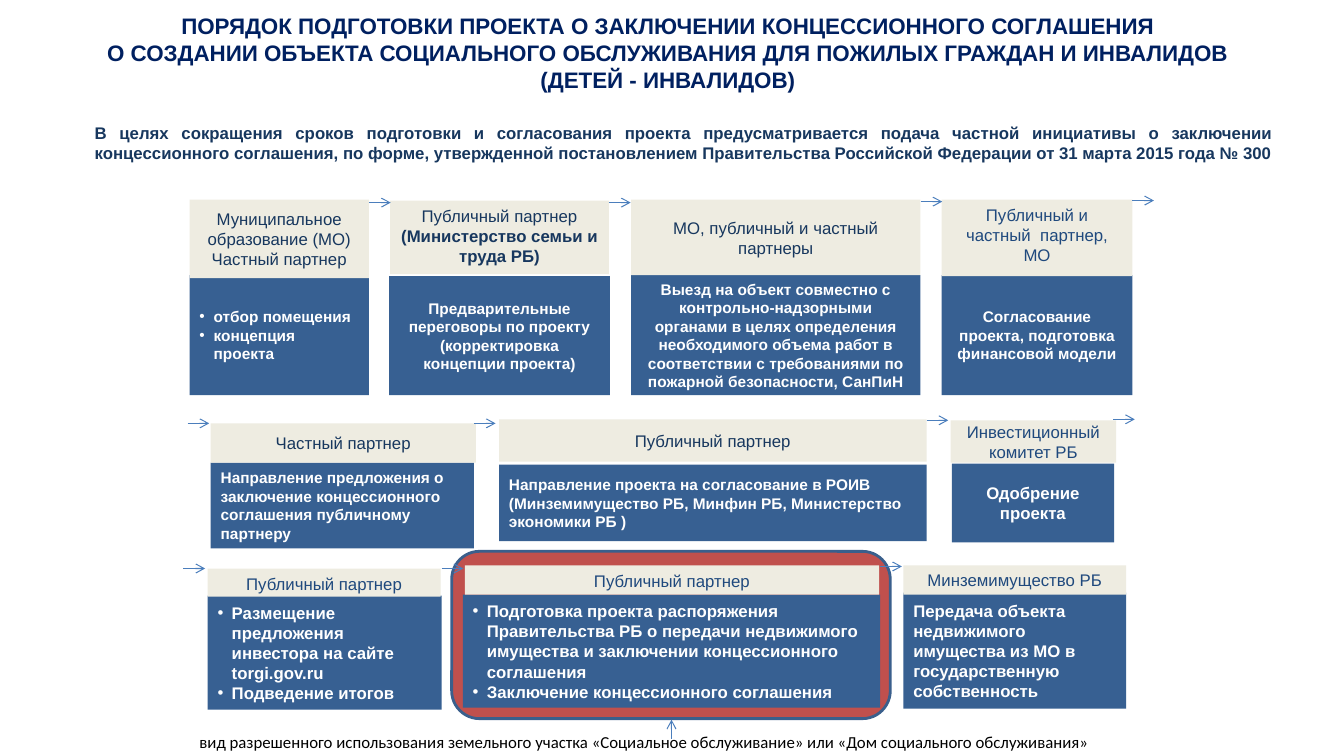
from lxml import etree
from pptx import Presentation
from pptx.dml.color import RGBColor
from pptx.enum.shapes import MSO_CONNECTOR, MSO_SHAPE
from pptx.enum.text import MSO_ANCHOR, PP_ALIGN
from pptx.oxml.ns import qn
from pptx.util import Inches, Pt

LEFT, CENTER, JUSTIFY = PP_ALIGN.LEFT, PP_ALIGN.CENTER, PP_ALIGN.JUSTIFY
TOP, MIDDLE = MSO_ANCHOR.TOP, MSO_ANCHOR.MIDDLE
RECT, ROUNDED = MSO_SHAPE.RECTANGLE, MSO_SHAPE.ROUNDED_RECTANGLE
STRAIGHT = MSO_CONNECTOR.STRAIGHT

CREAM, BLUE, WHITE = "EEECE1", "376092", "FFFFFF"
NAVY, STEEL, TITLE_BLUE = "17375E", "1F497D", "002060"
RED, FRAME_BLUE, ARROW_BLUE = "C0504D", "3A5F8C", "4B7EBC"
ARROW_LENGTH = 2.15


def color(value):
    return RGBColor.from_string(value)


class Board:
    """Draws styled elements on a page whose grid has 75 rows and square cells."""

    def __init__(self, deck):
        self.page = deck.slides.add_slide(deck.slide_layouts[6])
        self.cell = deck.slide_height / 75

    def place(self, *cells):
        return [round(count * self.cell) for count in cells]

    def fill_text(self, box, lines, ink, size=12, align=LEFT, anchor=TOP,
                  bold=False, bold_from=None, bullets=False, font="Arial"):
        frame = box.text_frame
        frame.word_wrap = True
        frame.vertical_anchor = anchor
        frame.text = "\n".join(lines)
        for index, para in enumerate(frame.paragraphs):
            para.alignment = align
            if bullets:
                self.bullet(para)
            for span in para.runs:
                span.font.name = font
                span.font.size = Pt(size)
                span.font.color.rgb = color(ink)
                span.font.bold = bold or (bold_from is not None and index >= bold_from)

    def bullet(self, para):
        properties = para._p.get_or_add_pPr()
        properties.set("marL", str(Inches(0.14)))
        properties.set("indent", str(-Inches(0.14)))
        etree.SubElement(properties, qn("a:buFont")).set("typeface", "Arial")
        etree.SubElement(properties, qn("a:buChar")).set("char", "•")

    def text(self, area, lines, ink, **style):
        box = self.page.shapes.add_textbox(*self.place(*area))
        self.fill_text(box, lines, ink, **style)

    def panel(self, area, fill, kind=RECT, outline=None):
        box = self.page.shapes.add_shape(kind, *self.place(*area))
        box.shadow.inherit = False
        box.fill.solid()
        box.fill.fore_color.rgb = color(fill)
        if outline:
            box.line.color.rgb = color(outline)
            box.line.width = Pt(2)
        else:
            box.line.fill.background()
        return box

    def step(self, header, body):
        area, lines, style = body
        self.fill_text(self.panel(area, BLUE), lines, WHITE,
                       **{"bold": True, "anchor": MIDDLE, **style})
        area, lines, style = header
        self.fill_text(self.panel(area, CREAM), lines,
                       **{"ink": NAVY, "align": CENTER, "anchor": MIDDLE, **style})

    def arrow(self, left, top, across=ARROW_LENGTH, down=0):
        ends = self.place(left, top, left + across, top + down)
        link = self.page.shapes.add_connector(STRAIGHT, *ends)
        link.line.color.rgb = color(ARROW_BLUE)
        link.line.width = Pt(0.75)
        outline = link._element.spPr.find(qn("a:ln"))
        etree.SubElement(outline, qn("a:tailEnd")).set("type", "arrow")
        etree.SubElement(link._element.spPr, qn("a:effectLst"))


STEPS = [
    (((18.8, 19.8, 17.8, 7.8), ["Муниципальное образование (МО)", "Частный партнер"], {}),
     ((18.8, 27.3, 17.8, 11.9), ["отбор помещения", "концепция проекта"],
      {"size": 11, "bullets": True})),
    (((38.7, 19.9, 21.7, 7.3), ["Публичный партнер", "(Министерство семьи и труда РБ)"],
      {"anchor": TOP, "bold_from": 1}),
     ((38.6, 27.4, 21.9, 11.8),
      ["Предварительные переговоры по проекту (корректировка концепции проекта)"],
      {"size": 11, "align": CENTER})),
    (((62.6, 19.8, 28.7, 7.5), ["МО, публичный и частный партнеры"], {}),
     ((62.6, 27.3, 28.7, 11.9),
      ["Выезд на объект совместно с контрольно-надзорными органами в целях определения "
       "необходимого объема работ в соответствии с требованиями по пожарной "
       "безопасности, СанПиН"],
      {"size": 11, "align": CENTER})),
    (((93.4, 19.8, 18.9, 7.6), ["Публичный и частный  партнер, МО"],
      {"ink": STEEL, "anchor": TOP}),
     ((93.4, 27.3, 18.9, 11.9), ["Согласование проекта, подготовка финансовой модели"],
      {"size": 11, "align": CENTER})),
    (((20.9, 42, 26.3, 3.9), ["Частный партнер"], {}),
     ((20.9, 45.9, 26.1, 8.5),
      ["Направление предложения о заключение концессионного соглашения публичному партнеру"],
      {"size": 11})),
    (((49.5, 41.6, 42.4, 4.2), ["Публичный партнер"], {}),
     ((49.5, 46.1, 42.4, 7.6),
      ["Направление проекта на согласование в РОИВ (Минземимущество РБ, Минфин РБ, "
       "Министерство экономики РБ )"],
      {"size": 11})),
    (((94.3, 41.7, 16.4, 4.2), ["Инвестиционный комитет РБ"], {"ink": STEEL}),
     ((94.4, 46, 16.1, 7.8), ["Одобрение проекта"], {"align": CENTER})),
    (((20.6, 56.4, 23.1, 2.8), ["Публичный партнер"], {"ink": STEEL, "anchor": TOP}),
     ((20.6, 59.1, 23.2, 11.3),
      ["Размещение предложения инвестора на сайте torgi.gov.ru", "Подведение итогов"],
      {"bullets": True})),
    (((46.1, 56.1, 41.1, 2.9), ["Публичный партнер"], {"ink": STEEL, "anchor": TOP}),
     ((45.9, 59, 41.4, 11.2),
      ["Подготовка проекта распоряжения Правительства РБ о передачи недвижимого "
       "имущества и заключении концессионного соглашения",
       "Заключение концессионного соглашения"],
      {"bullets": True})),
    (((89.6, 56.1, 22.1, 2.9), ["Минземимущество РБ"], {"ink": STEEL}),
     ((89.6, 58.8, 22.1, 11.5),
      ["Передача объекта недвижимого имущества из МО в государственную собственность"],
      {})),
]

ARROWS = [
    (36.6, 20.1), (60.4, 20.1), (91.3, 20), (112.3, 19.9),
    (18.6, 42), (47, 42), (91.9, 41.7), (110.4, 41.6),
    (18.2, 56.4), (43.8, 56.4), (87.3, 56.2),
]


def main():
    deck = Presentation()
    deck.slide_width, deck.slide_height = Inches(13.33), Inches(7.5)
    board = Board(deck)
    board.panel((44.8, 54.7, 43.5, 16.6), RED, ROUNDED, FRAME_BLUE)
    board.text((6.8, 0.7, 118.9, 9.1),
               ["ПОРЯДОК ПОДГОТОВКИ ПРОЕКТА О ЗАКЛЮЧЕНИИ КОНЦЕССИОННОГО СОГЛАШЕНИЯ",
                "О СОЗДАНИИ ОБЪЕКТА СОЦИАЛЬНОГО ОБСЛУЖИВАНИЯ ДЛЯ ПОЖИЛЫХ ГРАЖДАН И "
                "ИНВАЛИДОВ (ДЕТЕЙ - ИНВАЛИДОВ)"],
               TITLE_BLUE, size=16, align=CENTER, bold=True)
    board.text((8.4, 11.7, 118.9, 5),
               ["В целях сокращения сроков подготовки и согласования проекта "
                "предусматривается подача частной инициативы о заключении концессионного "
                "соглашения, по форме, утвержденной постановлением Правительства "
                "Российской Федерации от 31 марта 2015 года № 300"],
               NAVY, align=JUSTIFY, bold=True)
    for header, body in STEPS:
        board.step(header, body)
    board.text((18.8, 72.1, 95, 3),
               ["вид разрешенного использования земельного участка «Социальное "
                "обслуживание» или «Дом социального обслуживания»"],
               "000000", font="Calibri")
    for left, top in ARROWS:
        board.arrow(left, top)
    board.arrow(66.6, 73.3, across=0, down=-1.9)
    deck.save("out.pptx")


if __name__ == "__main__":
    main()
